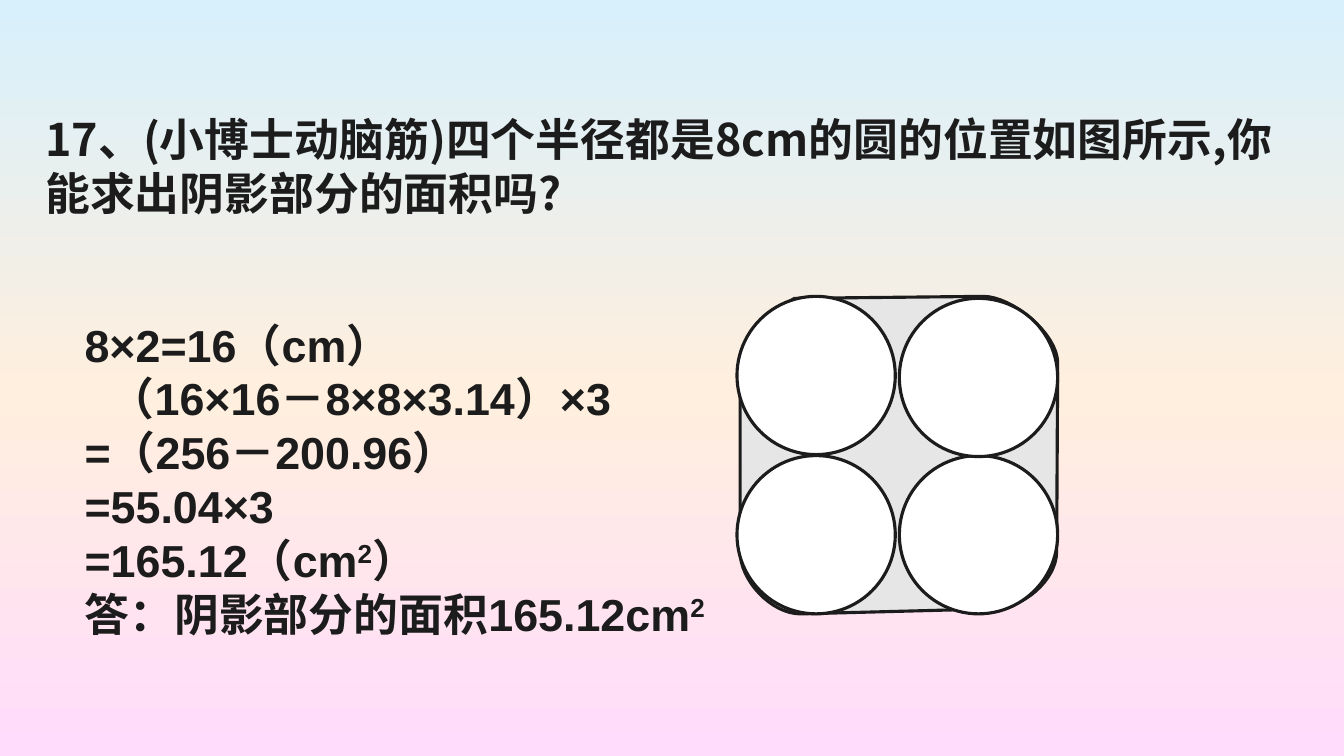
from dataclasses import dataclass

from pptx import Presentation
from pptx.dml.color import RGBColor as RGB
from pptx.enum.shapes import MSO_SHAPE as SHAPE
from pptx.oxml.ns import qn
from pptx.util import Inches, Pt


@dataclass(frozen=True)
class Theme:
    ink: str = "1C1C1C"
    shade: str = "E6E6E6"
    circle: str = "FFFFFF"
    sky: tuple = ((0, "D7F0FC"), (52, "FFEFDE"), (100, "FFDCFC"))
    latin: str = "Arial"
    chinese: str = "Noto Sans CJK SC"
    size: float = 32
    leading: float = 38.4
    outline: float = 2.25


THEME = Theme()
QUESTION = "17、(小博士动脑筋)四个半径都是8cm的圆的位置如图所示,你能求出阴影部分的面积吗?"
# Each line is a list of (text, font, superscript) runs.
SOLUTION = [
    [("8×2=16（cm）", THEME.latin, False)],
    [("（16×16－8×8×3.14）×3", THEME.latin, False)],
    [("=（256－200.96）", THEME.latin, False)],
    [("=55.04×3", THEME.latin, False)],
    [("=165.12（cm", THEME.latin, False), ("2", THEME.latin, True), ("）", THEME.latin, False)],
    [("答：", THEME.latin, False), ("阴影部分的面积", THEME.chinese, False),
     ("165.12cm", THEME.latin, False), ("2", THEME.latin, True)],
]
INDENTED_LINE = 1


def paint_background(page):
    fill = page.background.fill
    fill.gradient()
    fill.gradient_angle = 270
    stops = fill._fill._gradFill.find(qn("a:gsLst"))
    for stop in list(stops):
        stops.remove(stop)
    for percent, color in THEME.sky:
        stop = stops.makeelement(qn("a:gs"), {"pos": str(percent * 1000)})
        stop.append(stop.makeelement(qn("a:srgbClr"), {"val": color}))
        stops.append(stop)


def add_text(page, left, top, width, height, lines):
    box = page.shapes.add_textbox(Inches(left), Inches(top), Inches(width), Inches(height))
    frame = box.text_frame
    frame.word_wrap = True
    for index, runs in enumerate(lines):
        para = frame.paragraphs[0] if index == 0 else frame.add_paragraph()
        para.line_spacing = Pt(THEME.leading)
        for text, font, superscript in runs:
            span = para.add_run()
            span.text = text
            span.font.name = font
            span.font.size = Pt(THEME.size)
            span.font.bold = True
            span.font.color.rgb = RGB.from_string(THEME.ink)
            props = span.font._element
            props.find(qn("a:latin")).addnext(
                props.makeelement(qn("a:ea"), {"typeface": THEME.chinese}))
            if superscript:
                props.set("baseline", "30000")
    return frame


def style(shape, color):
    shape.shadow.inherit = False
    shape.fill.solid()
    shape.fill.fore_color.rgb = RGB.from_string(color)
    shape.line.color.rgb = RGB.from_string(THEME.ink)
    shape.line.width = Pt(THEME.outline)


def bezier(start, first, second, end, steps=16):
    """Points along a cubic curve, both ends included."""
    for step in range(steps + 1):
        t = step / steps
        u = 1 - t
        yield tuple(u**3 * a + 3 * u * u * t * b + 3 * u * t * t * c + t**3 * d
                    for a, b, c, d in zip(start, first, second, end))


def draw_circles(page, left, top):
    """Shaded wrap with four circles, placed from the top left corner."""
    corners = [
        ((0.03, 0.66), (0.03, 0.37), (0.34, 0.16), (0.57, 0.02)),
        ((2.44, 0), (2.73, 0), (3.18, 0.37), (3.18, 0.66)),
        ((3.17, 2.53), (3.17, 2.82), (2.83, 3.1), (2.54, 3.1)),
        ((0.63, 3.15), (0.34, 3.15), (0.03, 2.82), (0.03, 2.53)),
    ]
    points = [(Inches(left + x), Inches(top + y))
              for corner in corners for x, y in bezier(*corner)]
    builder = page.shapes.build_freeform(*points[0])
    builder.add_line_segments(points[1:], close=True)
    style(builder.convert_to_shape(), THEME.shade)

    diameter = 1.57
    for x, y in ((0, 1.58), (1.61, 1.58), (1.61, 0.02), (0, 0)):
        circle = page.shapes.add_shape(SHAPE.OVAL, Inches(left + x), Inches(top + y),
                                       Inches(diameter), Inches(diameter))
        style(circle, THEME.circle)


def main():
    deck = Presentation()
    deck.slide_width, deck.slide_height = Inches(13.33), Inches(7.5)
    page = deck.slides.add_slide(deck.slide_layouts[6])
    paint_background(page)
    add_text(page, 0.35, 1.06, 12.59, 1.18, [[(QUESTION, THEME.chinese, False)]])
    draw_circles(page, 7.31, 2.94)
    solution = add_text(page, 0.74, 3.1, 6.75, 3.87, SOLUTION)
    indent = solution.paragraphs[INDENTED_LINE]._p.get_or_add_pPr()
    indent.set("marL", str(Inches(0.25)))
    deck.save("out.pptx")


if __name__ == "__main__":
    main()
